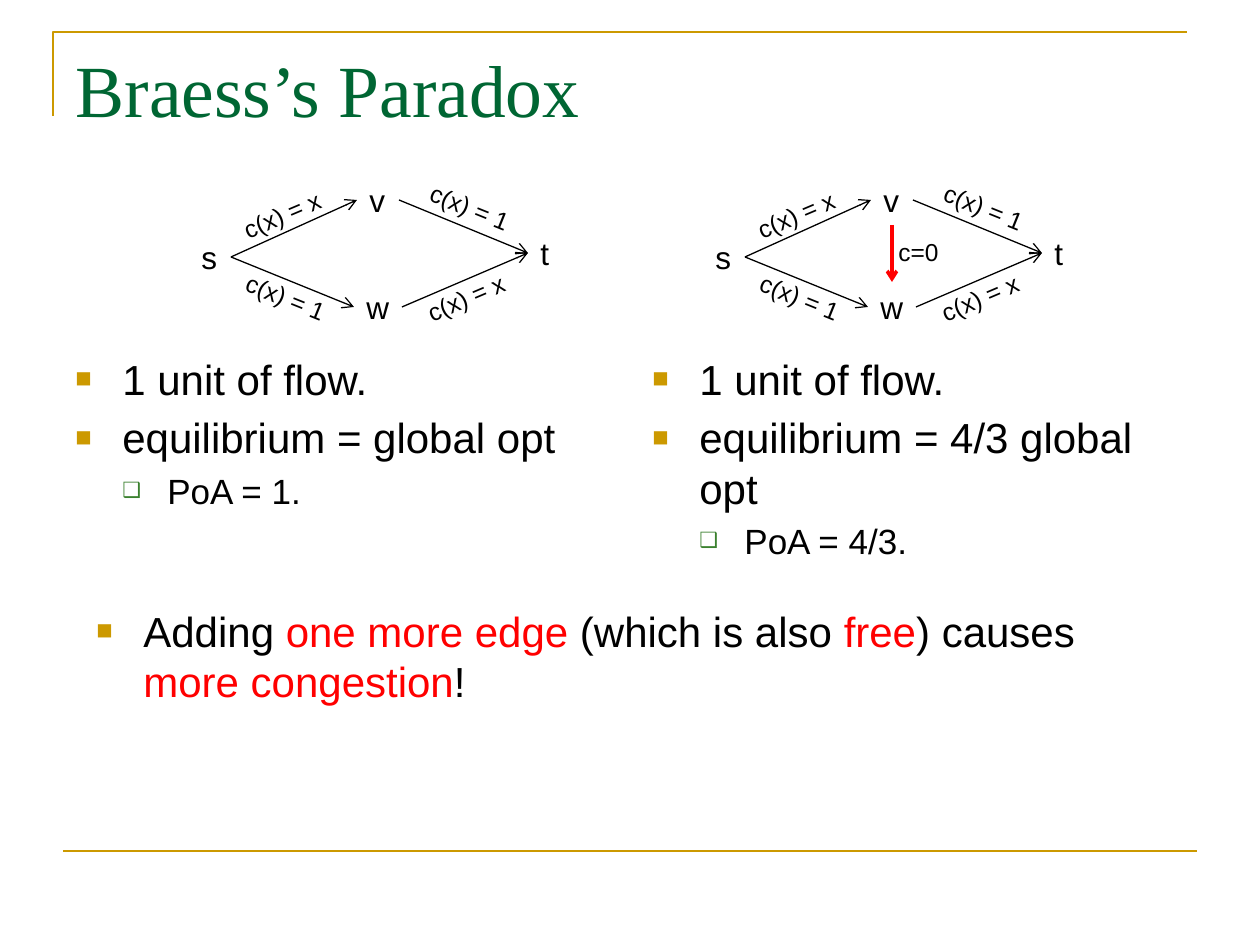
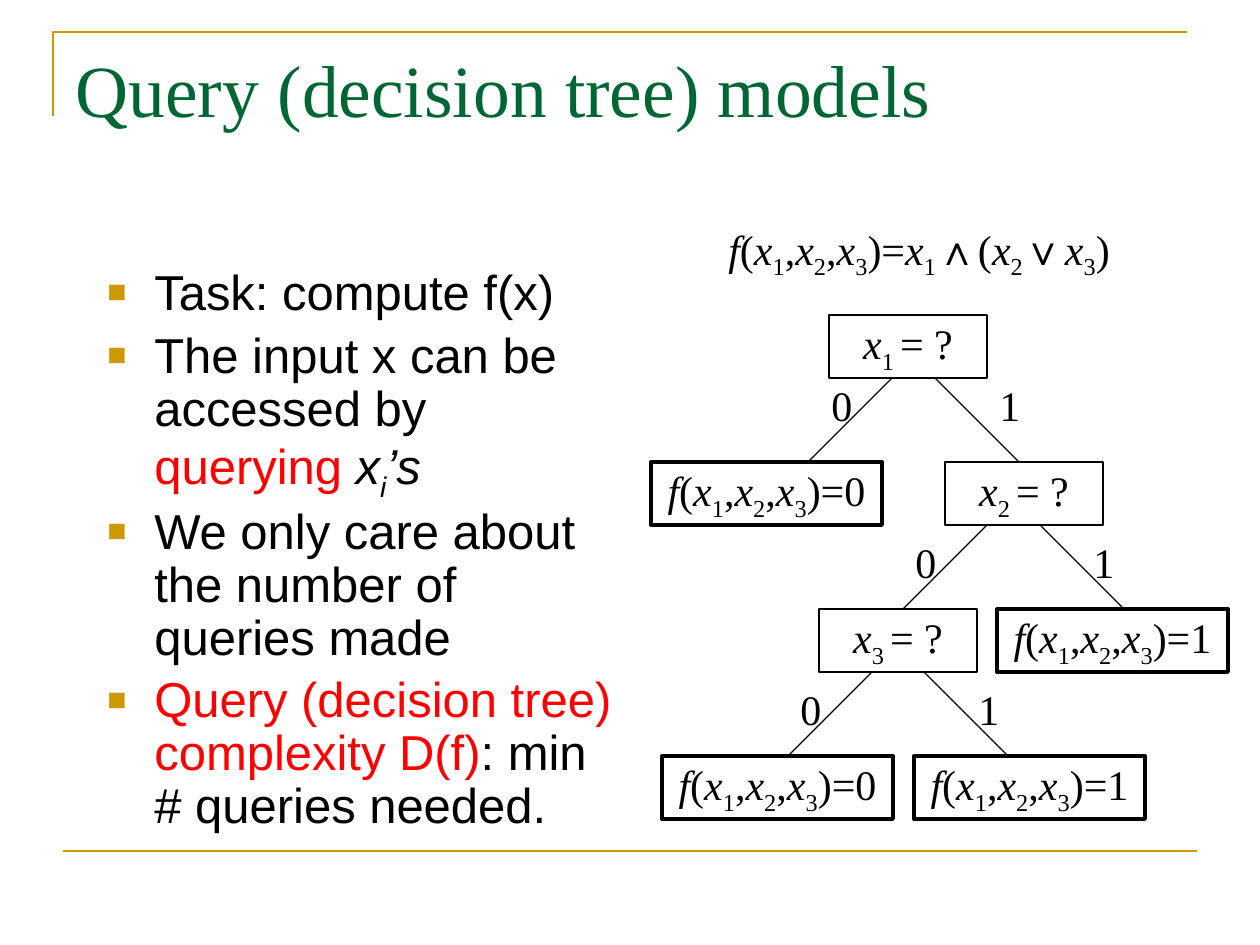
import dataclasses
import itertools

import lxml.etree
import pptx
import pptx.dml.color
import pptx.enum.shapes
import pptx.enum.text
import pptx.oxml.ns
import pptx.util

PX = pptx.util.Inches(1) / 126
ANCHOR = pptx.enum.text.MSO_ANCHOR
ALIGN = pptx.enum.text.PP_ALIGN
TOP, LEFT, BOTTOM, RIGHT = range(4)


@dataclasses.dataclass(frozen=True)
class Theme:
    sans: str = "Arial"
    serif: str = "Times New Roman"
    title: str = "006633"
    frame: str = "CC9900"
    sub_bullet: str = "3B812F"
    ink: str = "000000"
    accent: str = "FF0000"
    title_size: int = 42
    large_size: int = 28
    body_size: int = 24
    sub_size: int = 20
    node_size: int = 18
    cost_size: int = 14
    thin: float = 0.75
    frame_line: float = 1.5
    strong: float = 2
    heavy: float = 2.25


THEME = Theme()


@dataclasses.dataclass(frozen=True)
class Level:
    """One question of the decision tree; x positions are relative to the tree."""
    question: str
    left: int
    forks: tuple
    labels: tuple
    label_drop: int
    answers: tuple


LEVELS = (
    Level("x1 = ?", 178, (241, 284), (168, 336), 0, ((0, 0),)),
    Level("x2 = ?", 294, (336, 389), (252, 430), 10, ((346, 1),)),
    Level("x3 = ?", 168, (221, 273), (137, 315), 10, ((11, 0), (263, 1))),
)


def emu(*lengths):
    return [round(length * PX) for length in lengths]


def rgb(value):
    return pptx.dml.color.RGBColor.from_string(value)


def add_child(parent, tag, **attributes):
    child = lxml.etree.SubElement(parent, pptx.oxml.ns.qn(tag))
    for name, value in attributes.items():
        child.set(name, str(value))
    return child


def set_font(font, name, size, color=THEME.ink):
    font.name = name
    font.size = pptx.util.Pt(size)
    font.color.rgb = rgb(color)


def set_line(line, color, width):
    line.color.rgb = rgb(color)
    line.width = pptx.util.Pt(width)


def add_line(page, start, end, color=THEME.ink, width=THEME.thin, arrow=False):
    line = page.shapes.add_connector(
        pptx.enum.shapes.MSO_CONNECTOR.STRAIGHT, *emu(*start, *end))
    set_line(line.line, color, width)
    properties = line._element.spPr
    if arrow:
        add_child(line.line._get_or_add_ln(), "a:tailEnd", type="arrow")
    add_child(properties, "a:effectLst")
    return line


def join(page, source, source_side, target, target_side, **style):
    line = add_line(page, (0, 0), (0, 0), arrow=True, **style)
    line.begin_connect(source, source_side)
    line.end_connect(target, target_side)


def add_spans(para, spans):
    """Add (text, style) spans; a style names any of red, italic and sub."""
    for text, style in spans:
        span = para.add_run()
        span.text = text
        if "red" in style:
            span.font.color.rgb = rgb(THEME.accent)
        if "italic" in style:
            span.font.italic = True
        if "sub" in style:
            span.font._element.set("baseline", "-25000")


def formula_spans(formula):
    """Set f and x in italics and the index after an x as a subscript."""
    styles = []
    for char in formula:
        previous = styles[-1] if styles else ""
        if char in "fx":
            styles.append("italic")
        elif (char.isdigit() and previous == "italic"
              or char == " " and previous == "sub"):
            styles.append("sub")
        else:
            styles.append("")
    pairs = zip(formula, styles)
    for style, group in itertools.groupby(pairs, key=lambda pair: pair[1]):
        yield "".join(char for char, _ in group), style


def add_label(page, box, text, size, turn=0):
    label = page.shapes.add_textbox(*emu(*box))
    label.rotation = turn
    label.text_frame.word_wrap = False
    para = label.text_frame.paragraphs[0]
    para.text = text
    set_font(para.font, THEME.sans, size)
    return label


def write_formula(shape, formula):
    frame = shape.text_frame
    frame.word_wrap = False
    frame.vertical_anchor = ANCHOR.MIDDLE
    para = frame.paragraphs[0]
    para.alignment = ALIGN.CENTER
    set_font(para.font, THEME.serif, THEME.body_size)
    add_spans(para, formula_spans(formula))


def add_formula(page, box, formula):
    write_formula(page.shapes.add_textbox(*emu(*box)), formula)


def set_bullet(para, sub):
    margin, hang, color, percent, mark = (
        (92, 45, THEME.sub_bullet, 60, "❑") if sub
        else (47, 47, THEME.frame, 65, "■"))
    properties = para._p.get_or_add_pPr()
    properties.set("marL", str(emu(margin)[0]))
    properties.set("indent", str(emu(-hang)[0]))
    add_child(add_child(properties, "a:buClr"), "a:srgbClr", val=color)
    add_child(properties, "a:buSzPct", val=percent * 1000)
    add_child(properties, "a:buFont", typeface=THEME.sans)
    add_child(properties, "a:buChar", char=mark)


def add_bullets(page, box, items, size=THEME.body_size, spacing=None):
    """Add a list of (level, spans) items."""
    frame = page.shapes.add_textbox(*emu(*box)).text_frame
    frame.word_wrap = True
    for index, (level, spans) in enumerate(items):
        para = frame.add_paragraph() if index else frame.paragraphs[0]
        para_size = THEME.sub_size if level else size
        para.level = level
        para.line_spacing = spacing
        para.space_before = pptx.util.Pt(round(para_size * 0.2, 1))
        set_bullet(para, level)
        set_font(para.font, THEME.sans, para_size)
        add_spans(para, spans)


def add_page(deck, title_text):
    """Add a title-only page with the shared frame lines."""
    page = deck.slides.add_slide(deck.slide_layouts[5])
    corner = page.shapes.build_freeform(53, 116, scale=PX)
    corner.add_line_segments([(53, 32), (1187, 32)], close=False)
    bracket = corner.convert_to_shape()
    bracket.shadow.inherit = False
    bracket.fill.background()
    set_line(bracket.line, THEME.frame, THEME.frame_line)
    add_line(page, (63, 851), (1197, 851), THEME.frame, THEME.frame_line)

    title = page.shapes.title
    title.left, title.top, title.width, title.height = emu(63, 38, 1134, 158)
    title.text_frame.text = title_text
    title.text_frame.vertical_anchor = ANCHOR.TOP
    title.text_frame.auto_size = pptx.enum.text.MSO_AUTO_SIZE.NONE
    para = title.text_frame.paragraphs[0]
    para.alignment = ALIGN.LEFT
    set_font(para.font, THEME.serif, THEME.title_size, THEME.title)
    return page


def add_network(page, left, top, shortcut=False):
    """Draw the four-node flow network, with a free edge from v to w if asked."""
    nodes = {
        name: add_label(page, (left + x, top + y, width, 50), name, THEME.node_size)
        for name, x, y, width in (
            ("s", 0, 57, 42), ("t", 339, 53, 34), ("v", 168, 0, 42), ("w", 165, 107, 48))
    }
    for source, target in ("sv", "wt", "vt", "sw"):
        join(page, nodes[source], RIGHT, nodes[target], LEFT)
    for cost, x, y, turn in (
            ("c(x) = x", 40, 18, 337), ("c(x) = 1", 227, 11, 22),
            ("c(x) = 1", 43, 101, 22), ("c(x) = x", 224, 101, 337)):
        add_label(page, (left + x, top + y, 108, 43), cost, THEME.cost_size, turn)
    if shortcut:
        join(page, nodes["v"], BOTTOM, nodes["w"], TOP,
             color=THEME.accent, width=THEME.strong)
        add_label(page, (left + 183, top + 56, 66, 43), "c=0", THEME.cost_size)


def add_tree_box(page, box, formula, width):
    shape = page.shapes.add_shape(
        pptx.enum.shapes.MSO_SHAPE.RECTANGLE, *emu(*box))
    shape.shadow.inherit = False
    shape.fill.background()
    set_line(shape.line, THEME.ink, width)
    write_formula(shape, formula)


def add_tree(page, left, top):
    pitch, height, spread = 147, 63, 84
    for row, level in enumerate(LEVELS):
        y = top + row * pitch
        base = y + height
        add_tree_box(page, (left + level.left, y, 158, height),
                     level.question, THEME.thin)
        for bit, (fork, label) in enumerate(zip(level.forks, level.labels)):
            x = left + fork
            end = x + spread * (2 * bit - 1)
            add_line(page, (x, base), (end, y + pitch))
            add_formula(page, (left + label, base + level.label_drop, 42, 53), str(bit))
        for x, value in level.answers:
            add_tree_box(page, (left + x, y + pitch, 231, height),
                         f"f(x1,x2,x3)={value}", THEME.heavy)


def build_paradox(deck):
    page = add_page(deck, "Braess’s Paradox")
    add_network(page, 189, 175)
    add_network(page, 703, 175, shortcut=True)
    for left, ratio, price in ((63, "", "1"), (640, "4/3 ", "4/3")):
        add_bullets(page, (left, 347, 557, 225), [
            (0, [("1 unit of flow.", "")]),
            (0, [(f"equilibrium = {ratio}global opt", "")]),
            (1, [(f"PoA = {price}.", "")]),
        ])
    add_bullets(page, (84, 599, 1103, 242), [
        (0, [("Adding", ""), (" one more edge ", "red"), ("(which is also ", ""),
             ("free", "red"), (") causes ", ""), ("more congestion", "red"), ("!", "")]),
    ])


def build_query_models(deck):
    page = add_page(deck, "Query (decision tree) models")
    add_bullets(page, (95, 262, 535, 578), [
        (0, [("Task: compute f(x)", "")]),
        (0, [("The input x can be accessed by ", ""), ("querying ", "red"),
             ("x", "italic"), ("i", "italic sub"), ("’s", "italic")]),
        (0, [("We only care about the number of queries made", "")]),
        (0, [("Query (decision tree) complexity D(f)", "red"),
             (": min # queries needed.", "")]),
    ], THEME.large_size, 0.9)
    add_formula(page, (714, 210, 410, 84), "f(x1,x2,x3)=x1∧(x2∨x3)")
    add_tree(page, 651, 315)


def main():
    deck = pptx.Presentation()
    deck.slide_width, deck.slide_height = emu(1260, 945)
    build_paradox(deck)
    build_query_models(deck)
    deck.save("out.pptx")


if __name__ == "__main__":
    main()
